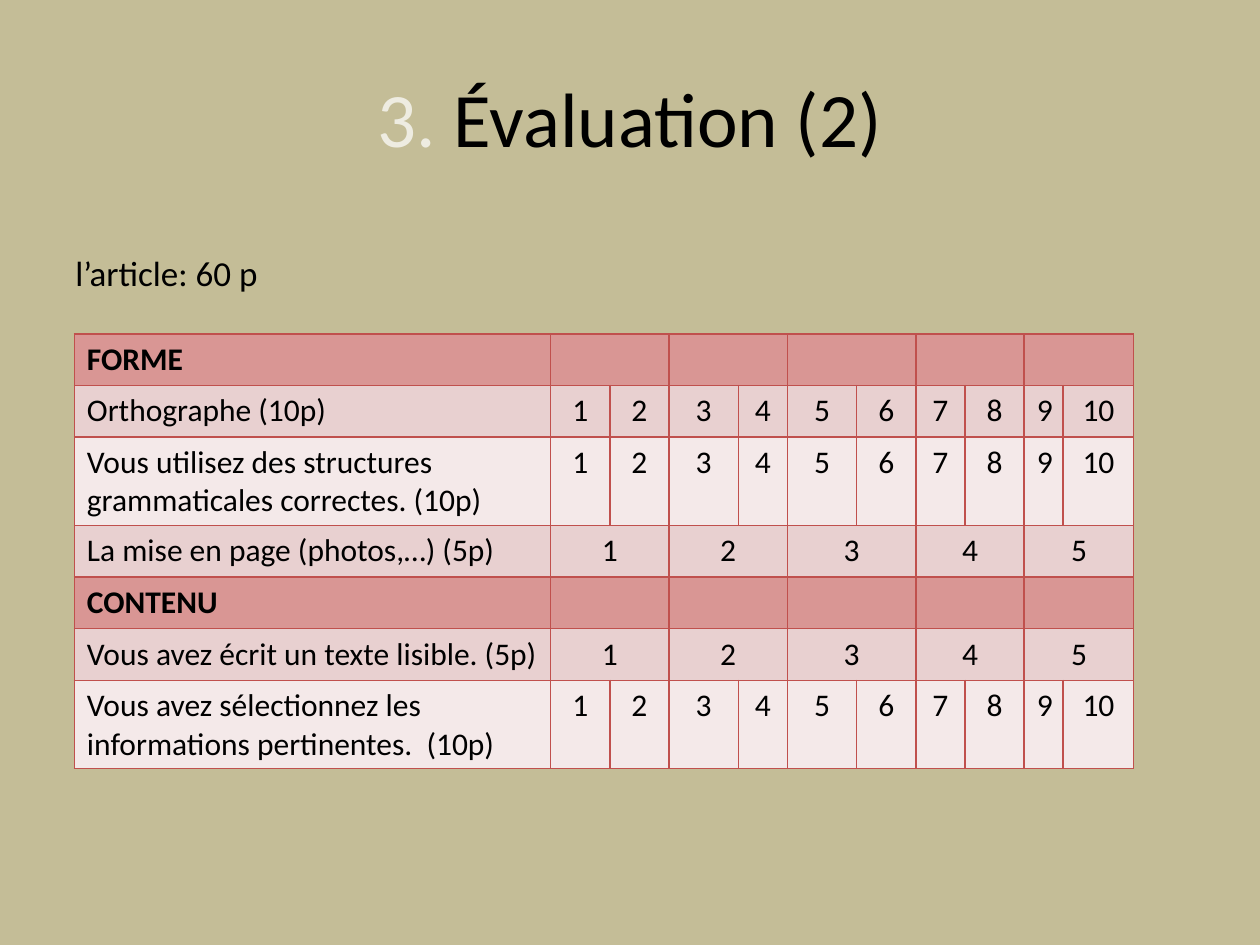
"""Build the evaluation grid slide for the article."""
from lxml import etree
from pptx import Presentation
from pptx import util as u
from pptx.dml.color import RGBColor
from pptx.enum import text
from pptx.oxml.ns import qn

THEME = {
    "font": "Calibri", "title": 44, "label": 20, "cell": 18,
    "bg": "C4BD97", "ink": "000000", "pale": "EEECE1", "line": "C0504D",
    "head": "D99694", "odd": "E8D0D0", "even": "F4E9E9",
}
COLS = [3.78, 0.47, 0.47, 0.55, 0.39, 0.55, 0.47, 0.39, 0.47, 0.31, 0.56]
ROW, TALL = 0.41, 0.7
ROWS = [
    ("FORME", 0, "head", ROW),
    ("Orthographe (10p)", 10, "odd", ROW),
    ("Vous utilisez des structures grammaticales correctes. (10p)", 10, "even", TALL),
    ("La mise en page (photos,…) (5p)", 5, "odd", ROW),
    ("CONTENU", 0, "head", ROW),
    ("Vous avez écrit un texte lisible. (5p)", 5, "odd", ROW),
    ("Vous avez sélectionnez les informations pertinentes.  (10p)", 10, "even", TALL),
]


def style(r, size, color="ink", bold=False):
    """Apply the theme font to a run."""
    r.font.name = THEME["font"]
    r.font.size = u.Pt(THEME[size])
    r.font.bold = bold
    r.font.color.rgb = RGBColor.from_string(THEME[color])


def finish(cell, fill):
    """Fill a cell and draw its four borders."""
    tcPr = cell._tc.get_or_add_tcPr()
    for side in ("a:lnL", "a:lnR", "a:lnT", "a:lnB"):
        ln = etree.SubElement(tcPr, qn(side), w=str(u.Pt(1)))
        solid = etree.SubElement(ln, qn("a:solidFill"))
        etree.SubElement(solid, qn("a:srgbClr"), val=THEME["line"])
    cell.fill.solid()
    cell.fill.fore_color.rgb = RGBColor.from_string(THEME[fill])


prs = Presentation()
prs.slide_width, prs.slide_height = u.Inches(10), u.Inches(7.5)
W, H = prs.slide_width, prs.slide_height
s = prs.slides.add_slide(prs.slide_layouts[5])
s.background.fill.solid()
s.background.fill.fore_color.rgb = RGBColor.from_string(THEME["bg"])

sp = s.shapes.title
sp.left, sp.top, sp.width, sp.height = int(W * 0.05), int(H * 0.04), int(W * 0.9), u.Inches(1.25)
tf = sp.text_frame
tf.vertical_anchor = text.MSO_ANCHOR.MIDDLE
p = tf.paragraphs[0]
p.alignment = text.PP_ALIGN.CENTER
for words, color in (("3. ", "pale"), ("Évaluation (2)", "ink")):
    r = p.add_run()
    r.text = words
    style(r, "title", color)

sp = s.shapes.add_textbox(int(W * 0.05), u.Inches(1.68), u.Inches(8.52), u.Inches(0.7))
tf = sp.text_frame
tf.word_wrap = True
tf.vertical_anchor = text.MSO_ANCHOR.BOTTOM
tf.text = "l’article: 60 p"
style(tf.paragraphs[0].runs[0], "label")

height = sum(row[3] for row in ROWS)
tbl = s.shapes.add_table(len(ROWS), len(COLS), u.Inches(0.59), u.Inches(2.65),
                         u.Inches(sum(COLS)), u.Inches(height)).table
for col, width in zip(tbl.columns, COLS):
    col.width = u.Inches(width)

for i, (label, points, fill, row_height) in enumerate(ROWS):
    tbl.rows[i].height = u.Inches(row_height)
    for j in range(len(COLS)):
        finish(tbl.cell(i, j), fill)
    cell = tbl.cell(i, 0)
    cell.text_frame.text = label
    style(cell.text_frame.paragraphs[0].runs[0], "cell", bold=points == 0)
    step = 1 if points == 10 else 2
    for n, j in enumerate(range(1, len(COLS), step), 1):
        cell = tbl.cell(i, j)
        if step == 2:
            cell.merge(tbl.cell(i, j + 1))
        if points:
            cell.text_frame.text = str(n)
            p = cell.text_frame.paragraphs[0]
            p.alignment = text.PP_ALIGN.CENTER
            style(p.runs[0], "cell")

prs.save("out.pptx")
